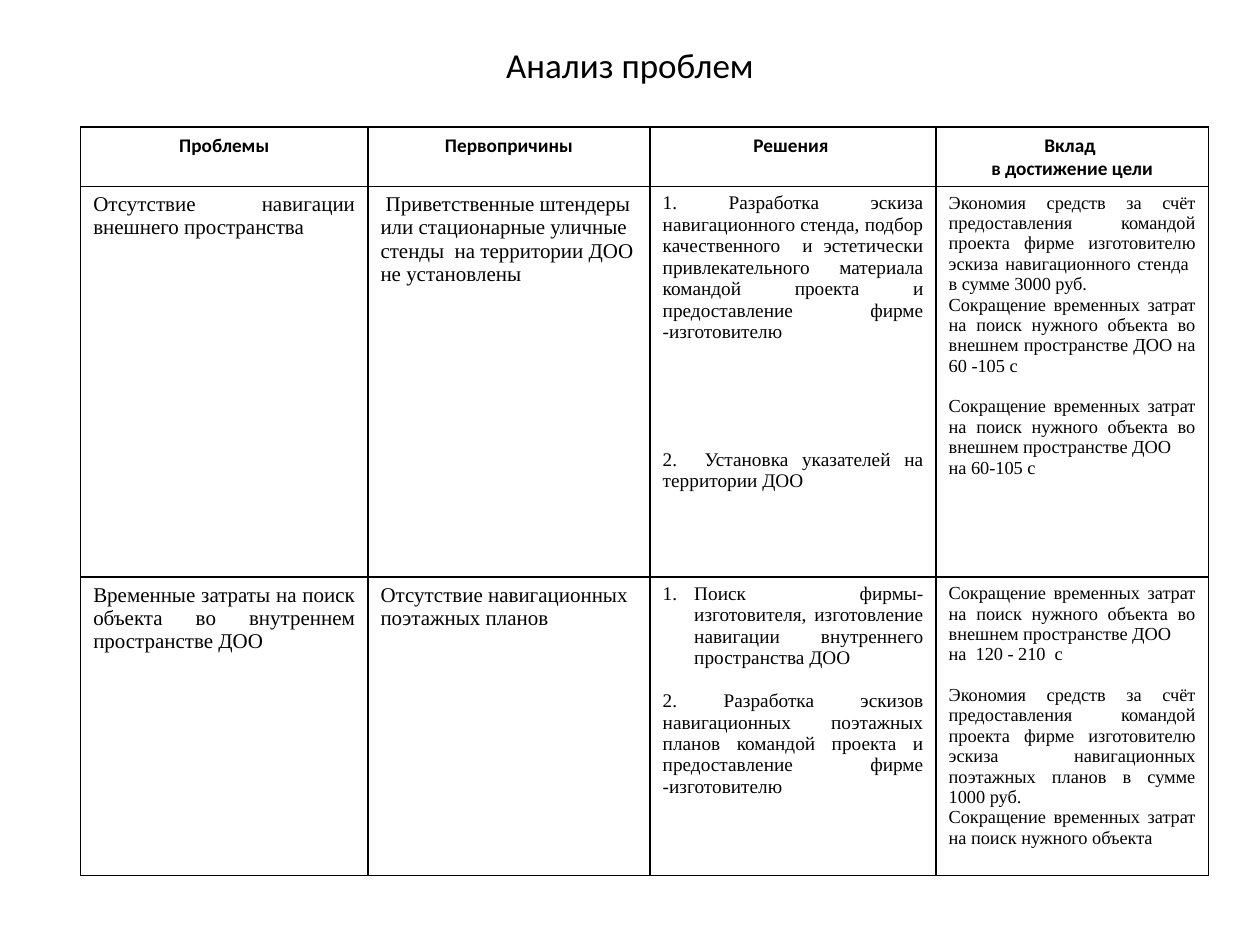
from lxml import etree
from pptx import Presentation
from pptx.dml.color import RGBColor
from pptx.enum.text import MSO_ANCHOR, PP_ALIGN
from pptx.oxml.ns import qn
from pptx.util import Inches, Pt

CENTER, LEFT, JUSTIFY = PP_ALIGN.CENTER, PP_ALIGN.LEFT, PP_ALIGN.JUSTIFY
MIDDLE = MSO_ANCHOR.MIDDLE
SANS, SERIF = "Calibri", "Times New Roman"
BLACK = "000000"
COLUMNS = (2.28, 2.24, 2.27, 2.16)
ROWS = (0.47, 3.1, 2.37)
SIZES = (12, 12, 11, 10.5)
ALIGNS = (JUSTIFY, LEFT, JUSTIFY, JUSTIFY)
LINE = 1.107

HEADERS = (
    ["Проблемы"],
    ["Первопричины"],
    ["Решения "],
    ["Вклад ", "в достижение цели"],
)
OUTDOOR = "Сокращение временных затрат на поиск нужного объекта во внешнем пространстве ДОО"
SAVING = "Экономия средств за счёт предоставления командой проекта фирме изготовителю эскиза "
BODY = (
    (
        ["Отсутствие навигации внешнего пространства"],
        [" Приветственные штендеры или стационарные уличные стенды  на территории ДОО не установлены"],
        ["1. Разработка эскиза навигационного стенда, подбор качественного  и эстетически "
         "привлекательного материала командой проекта и предоставление фирме -изготовителю ",
         "2.  Установка указателей на территории ДОО"],
        [SAVING + "навигационного стенда  в сумме 3000 руб.",
         OUTDOOR + " на ", "60 -105 с", OUTDOOR, "на 60-105 с"],
    ),
    (
        ["Временные затраты на поиск объекта во внутреннем пространстве ДОО"],
        ["Отсутствие навигационных поэтажных планов"],
        ["Поиск фирмы-изготовителя, изготовление навигации внутреннего пространства ДОО",
         "2. Разработка эскизов навигационных поэтажных планов командой проекта и "
         "предоставление фирме -изготовителю "],
        [OUTDOOR, "на  120 - 210  с",
         SAVING + "навигационных поэтажных планов в сумме 1000 руб.",
         "Сокращение временных затрат на поиск нужного объекта "],
    ),
)
GAPS = {(1, 2, 1): 5, (1, 3, 3): 1, (2, 2, 1): 1, (2, 3, 2): 1}


def rgb(value):
    """Return the colour for a hex string."""
    return RGBColor.from_string(value)


def write(tf, lines, font, size, align, bold=False):
    """Fill a text frame with one paragraph per line."""
    for i, line in enumerate(lines):
        p = tf.paragraphs[0] if i == 0 else tf.add_paragraph()
        p.text = line
        p.alignment = align
        p.font.name = font
        p.font.size = Pt(size)
        p.font.bold = bold
        p.font.color.rgb = rgb(BLACK)


def add_title(s, text):
    """Add the centred slide heading."""
    tf = s.shapes.add_textbox(Inches(0.5), 0, Inches(9), Inches(1.02)).text_frame
    tf.word_wrap = True
    tf.vertical_anchor = MIDDLE
    write(tf, [text], SANS, 20, CENTER)


def outline(cell, color, width):
    """Clear the fill of a cell and draw its four borders."""
    cell.fill.background()
    props = cell._tc.get_or_add_tcPr()
    for i, side in enumerate(("a:lnL", "a:lnR", "a:lnT", "a:lnB")):
        ln = etree.Element(qn(side), w=str(Pt(width)))
        fill = etree.SubElement(ln, qn("a:solidFill"))
        etree.SubElement(fill, qn("a:srgbClr"), val=color)
        props.insert(i, ln)


def number(p, indent):
    """Turn a paragraph into a numbered item with a hanging indent."""
    props = p._p.get_or_add_pPr()
    props.set("marL", str(Inches(indent)))
    props.set("indent", str(Inches(-indent)))
    etree.SubElement(props, qn("a:buFont"), typeface="+mj-lt")
    etree.SubElement(props, qn("a:buAutoNum"), type="arabicPeriod")
    default = props.find(qn("a:defRPr"))
    if default is not None:
        props.append(default)


def add_analysis(s):
    """Add the table of problems, causes, solutions and contributions."""
    table = s.shapes.add_table(
        len(ROWS), len(COLUMNS), Inches(0.64), Inches(1.01),
        Inches(sum(COLUMNS)), Inches(sum(ROWS)),
    ).table
    table.first_row = table.horz_banding = False
    for column, width in zip(table.columns, COLUMNS):
        column.width = Inches(width)
    for row, height in zip(table.rows, ROWS):
        row.height = Inches(height)
    for c, lines in enumerate(HEADERS):
        write(table.cell(0, c).text_frame, lines, SANS, 11, CENTER, True)
    for r, row in enumerate(BODY, 1):
        for c, lines in enumerate(row):
            write(table.cell(r, c).text_frame, lines, SERIF, SIZES[c], ALIGNS[c])
    for (r, c, i), count in GAPS.items():
        p = table.cell(r, c).text_frame.paragraphs[i]
        p.space_before = Pt(round(count * SIZES[c] * LINE, 1))
    number(table.cell(2, 2).text_frame.paragraphs[0], 0.25)
    for cell in table.iter_cells():
        outline(cell, BLACK, 1)


def main():
    """Build and save the slide."""
    prs = Presentation()
    prs.slide_width, prs.slide_height = Inches(10), Inches(7.5)
    s = prs.slides.add_slide(prs.slide_layouts[6])
    add_title(s, "Анализ проблем")
    add_analysis(s)
    prs.save("out.pptx")


if __name__ == "__main__":
    main()
